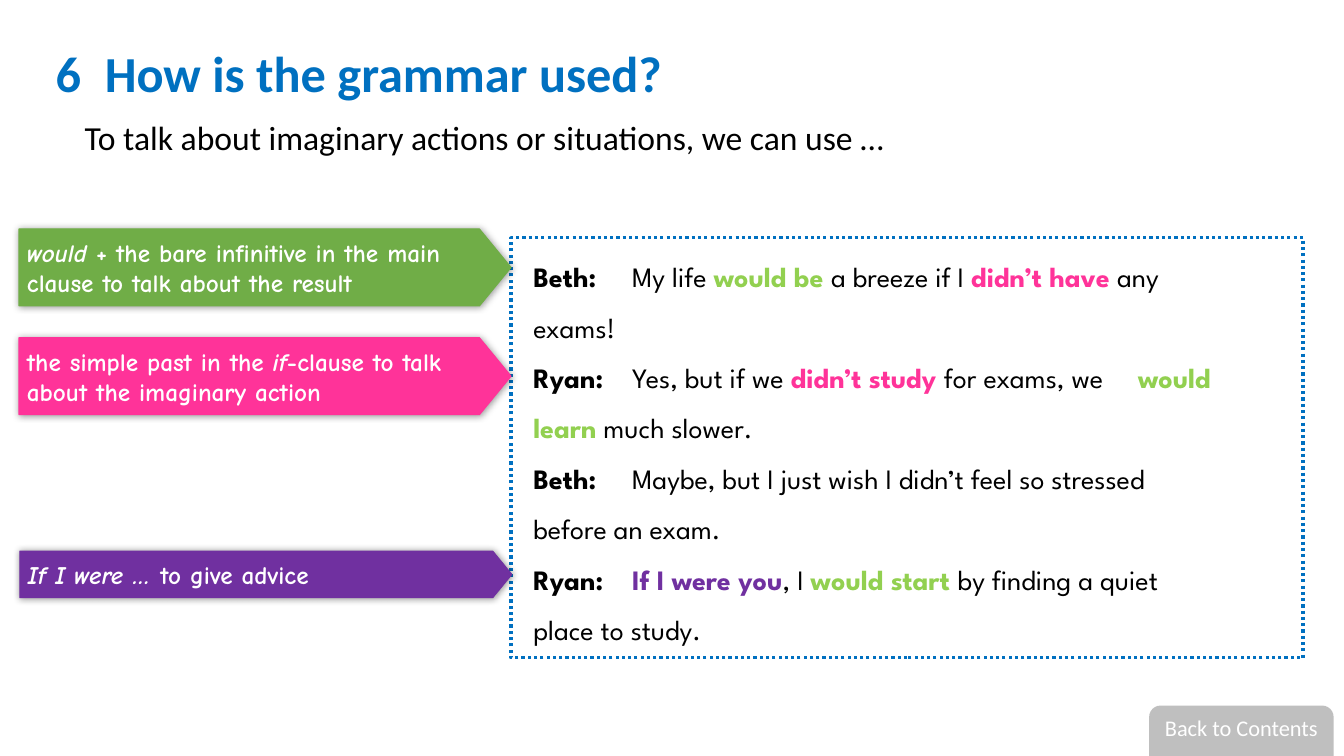
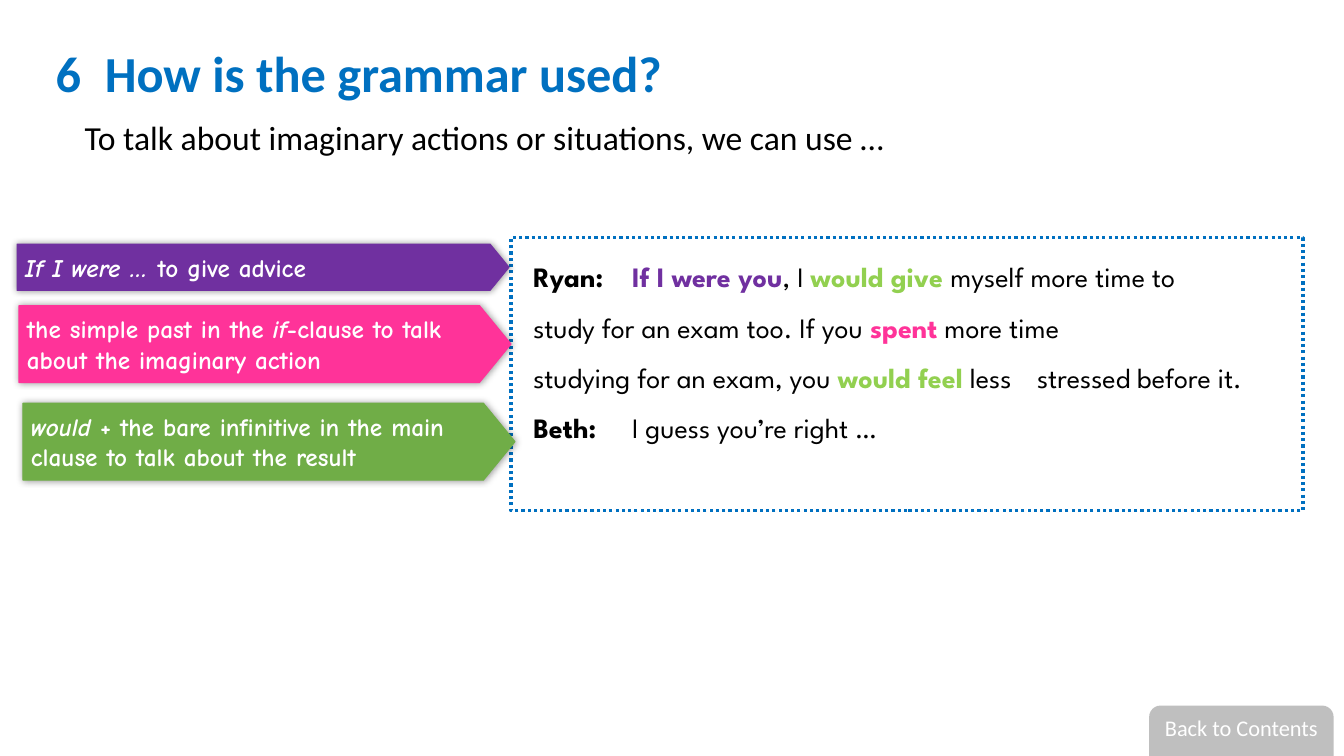
from dataclasses import dataclass

from lxml import etree
from pptx import Presentation
from pptx.dml.color import RGBColor
from pptx.enum import dml, shapes, text
from pptx.oxml import ns
from pptx.util import Cm, Pt


@dataclass(frozen=True)
class Theme:
    blue: str = "0070C0"
    black: str = "000000"
    white: str = "FFFFFF"
    grey: str = "BFBFBF"
    green: str = "70AD47"
    lime: str = "92D050"
    pink: str = "FF3399"
    purple: str = "7030A0"
    body_font: str = "Calibri"
    tag_font: str = "Comic Neue"
    dialogue_font: str = "League Spartan"
    title_size: int = 36
    lead_size: int = 24
    dialogue_size: int = 20
    tag_size: int = 18
    button_size: int = 16


THEME = Theme()
TAB_STOPS = (2.49, 6.22)
TAG_WIDTH = 12.4
TITLE = "6\tHow is the grammar used?"
LEAD = "To talk about imaginary actions or situations, we can use …"

# Dialogue span style: colour, bold
SPAN_STYLES = {
    "plain": (THEME.black, False),
    "speaker": (THEME.black, True),
    "result": (THEME.lime, True),
    "past": (THEME.pink, True),
    "advice": (THEME.purple, True),
}

# Tag: colour, height, (text, italic) spans
TAGS = {
    "result": (THEME.green, 1.94, [
        ("would", True),
        (" + the bare infinitive in the main clause to talk about the result", False)]),
    "past": (THEME.pink, 1.94, [
        ("the simple past in the ", False), ("if", True),
        ("-clause to talk about the imaginary action", False)]),
    "advice": (THEME.purple, 1.17, [
        ("If I were … ", True), ("to give advice", False)]),
}

# Page: dialogue height, tag positions (name, left, top), dialogue lines
PAGES = [
    (10.59,
     [("result", 0.48, 5.77), ("past", 0.48, 8.51), ("advice", 0.5, 13.89)],
     [
         [("Beth:\t", "speaker"), ("My life ", "plain"), ("would be ", "result"),
          ("a breeze if I ", "plain"), ("didn’t have", "past"),
          (" any\nexams!", "plain")],
         [("Ryan:\t", "speaker"), ("Yes, but if we ", "plain"),
          ("didn’t study ", "past"), ("for exams, we \t", "plain"),
          ("would\nlearn", "result"), (" much slower.", "plain")],
         [("Beth:\t", "speaker"),
          ("Maybe, but I just wish I didn’t feel so stressed\nbefore an exam.", "plain")],
         [("Ryan:\t", "speaker"), ("If I were you", "advice"), (", I ", "plain"),
          ("would start ", "result"),
          ("by finding a quiet\nplace to study.", "plain")],
     ]),
    (6.88,
     [("result", 0.58, 10.16), ("past", 0.48, 7.7), ("advice", 0.43, 6.15)],
     [
         [("Ryan:\t", "speaker"), ("If I were you", "advice"), (", I ", "plain"),
          ("would give", "result"),
          (" myself more time to\nstudy for an exam too. If you ", "plain"),
          ("spent", "past"),
          (" more time\nstudying for an exam, you ", "plain"),
          ("would feel", "result"), (" less \tstressed before it.", "plain")],
         [("Beth:\t", "speaker"), ("I guess you’re right …", "plain")],
     ]),
]


class GrammarDeck:
    def __init__(self, theme):
        self.theme = theme
        self.deck = Presentation()
        self.deck.slide_width, self.deck.slide_height = Cm(33.87), Cm(19.05)
        self.page = None

    def add_page(self):
        self.page = self.deck.slides.add_slide(self.deck.slide_layouts[1])

    def style(self, font, name, size, color, bold=False, italic=False):
        font.name, font.size = name, Pt(size)
        font.bold, font.italic = bold, italic
        font.color.rgb = RGBColor.from_string(color)

    def frame(self, box, insets, anchor):
        """Set wrapping, anchor and the left, top, right, bottom insets in cm."""
        frame = box.text_frame
        frame.word_wrap = True
        frame.auto_size = text.MSO_AUTO_SIZE.NONE
        frame.vertical_anchor = anchor
        (frame.margin_left, frame.margin_top,
         frame.margin_right, frame.margin_bottom) = map(Cm, insets)
        return frame

    def placeholder(self, index, words, place, insets, anchor, hanging=0):
        box = self.page.placeholders[index]
        box.left, box.top, box.width, box.height = map(Cm, place)
        frame = self.frame(box, insets, anchor)
        frame.text = words
        para = frame.paragraphs[0]
        para.alignment = text.PP_ALIGN.LEFT
        para.space_before = Pt(0)
        properties = para._p.get_or_add_pPr()
        properties.set("marL", str(Cm(hanging)))
        properties.set("indent", str(-Cm(hanging)))
        etree.SubElement(properties, ns.qn("a:buNone"))
        return para

    def title(self, words):
        para = self.placeholder(0, words, (1.4, 1.07, 15.52, 1.6), (0, 0, 0, 0),
                                text.MSO_ANCHOR.MIDDLE, hanging=1.24)
        para.line_spacing = Pt(40)
        self.style(para.runs[0].font, self.theme.body_font,
                   self.theme.title_size, self.theme.blue, bold=True)

    def lead(self, words):
        para = self.placeholder(1, words, (1.88, 2.82, 23.8, 1.27),
                                (0.25, 0.13, 0.25, 0.13), text.MSO_ANCHOR.TOP)
        self.style(para.runs[0].font, self.theme.body_font,
                   self.theme.lead_size, self.theme.black)

    def shape(self, kind, place, fill):
        box = self.page.shapes.add_shape(kind, *map(Cm, place))
        box.fill.solid()
        box.fill.fore_color.rgb = RGBColor.from_string(fill)
        box.line.fill.background()
        box.shadow.inherit = False
        return box

    def outline(self, box, color, width):
        box.line.color.rgb = RGBColor.from_string(color)
        box.line.width = Pt(width)

    def glow(self, box):
        """Give the shape a soft dark shadow on all sides."""
        effects = box._element.spPr.find(ns.qn("a:effectLst"))
        shadow = etree.SubElement(effects, ns.qn("a:outerShdw"),
                                  blurRad=str(Pt(5)), dist="0", dir="0")
        color = etree.SubElement(shadow, ns.qn("a:srgbClr"), val=self.theme.black)
        etree.SubElement(color, ns.qn("a:alpha"), val="40000")

    def dialogue(self, height, lines):
        box = self.shape(shapes.MSO_SHAPE.RECTANGLE, (12.88, 5.99, 19.96, height),
                         self.theme.white)
        self.outline(box, self.theme.blue, 2.25)
        box.line.dash_style = dml.MSO_LINE.ROUND_DOT
        frame = self.frame(box, (0.56, 0.13, 0.4, 0.13), text.MSO_ANCHOR.TOP)
        for number, spans in enumerate(lines):
            para = frame.add_paragraph() if number else frame.paragraphs[0]
            para.alignment = text.PP_ALIGN.LEFT
            para.line_spacing = 1.5
            stops = etree.SubElement(para._p.get_or_add_pPr(), ns.qn("a:tabLst"))
            for stop in TAB_STOPS:
                etree.SubElement(stops, ns.qn("a:tab"), pos=str(Cm(stop)), algn="l")
            for words, role in spans:
                self.dialogue_span(para, words, *SPAN_STYLES[role])

    def dialogue_span(self, para, words, color, bold):
        for number, part in enumerate(words.split("\n")):
            if number:
                para.add_line_break()
            span = para.add_run()
            span.text = part
            self.style(span.font, self.theme.dialogue_font,
                       self.theme.dialogue_size, color, bold)

    def tag(self, name, left, top):
        color, height, spans = TAGS[name]
        box = self.shape(shapes.MSO_SHAPE.PENTAGON, (left, top, TAG_WIDTH, height), color)
        box.adjustments[0] = 0.41
        self.outline(box, color, 0.75)
        self.glow(box)
        frame = self.frame(box, (0.2, 0.2, 0.2, 0.2), text.MSO_ANCHOR.MIDDLE)
        para = frame.paragraphs[0]
        para.alignment = text.PP_ALIGN.LEFT
        for words, italic in spans:
            span = para.add_run()
            span.text = words
            self.style(span.font, self.theme.tag_font, self.theme.tag_size,
                       self.theme.white, bold=True, italic=italic)

    def button(self, words):
        box = self.shape(shapes.MSO_SHAPE.ROUNDED_RECTANGLE,
                         (28.96, 17.78, 4.65, 1.73), self.theme.grey)
        frame = self.frame(box, (0, 0.13, 0, 0.13), text.MSO_ANCHOR.TOP)
        frame.text = words
        para = frame.paragraphs[0]
        para.alignment = text.PP_ALIGN.CENTER
        self.style(para.runs[0].font, self.theme.body_font,
                   self.theme.button_size, self.theme.white)


def main():
    grammar = GrammarDeck(THEME)
    for height, tags, lines in PAGES:
        grammar.add_page()
        grammar.title(TITLE)
        grammar.lead(LEAD)
        grammar.dialogue(height, lines)
        for name, left, top in tags:
            grammar.tag(name, left, top)
        grammar.button("Back to Contents")
    grammar.deck.save("out.pptx")


if __name__ == "__main__":
    main()
